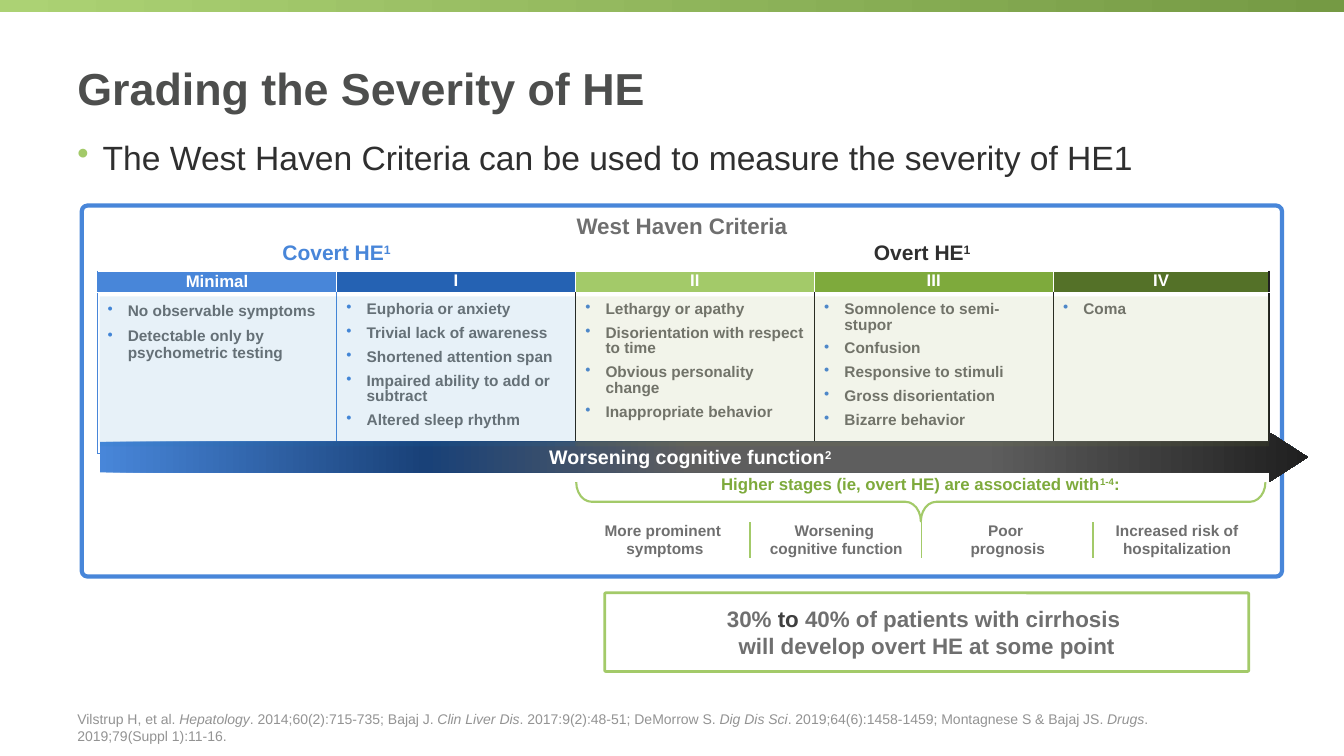
from lxml import etree
from pptx import Presentation
from pptx import util as u
from pptx.dml.color import RGBColor
from pptx.enum import shapes, text
from pptx.oxml import ns

C = {"white": "FFFFFF", "title": "4D4E4D", "dark": "2F2F2F", "grey": "6F6F6F",
     "pale": "939393", "ink": "3F3F3F", "black": "202020", "blue": "4886D9",
     "royal": "2562B3", "navy": "194178", "ash": "5E5E5E", "lime": "A3CA69",
     "green": "7EAA3C", "forest": "547128", "bar_start": "ACD274",
     "bar_end": "759A44", "olive": "88983A", "azure": "167FC0"}

GRADES = [
    ("Minimal", "blue", "blue", "blue",
     ["No observable symptoms", "Detectable only by psychometric testing"]),
    ("I", "royal", "blue", "black",
     ["Euphoria or anxiety", "Trivial lack of awareness", "Shortened attention span",
      "Impaired ability to add or subtract", "Altered sleep rhythm"]),
    ("II", "lime", "black", "black",
     ["Lethargy or apathy", "Disorientation with respect to time",
      "Obvious personality change", "Inappropriate behavior"]),
    ("III", "green", "black", "black",
     ["Somnolence to semi-stupor", "Confusion", "Responsive to stimuli",
      "Gross disorientation", "Bizarre behavior"]),
    ("IV", "forest", "black", "black", ["Coma"]),
]
OUTCOMES = ["More prominent \nsymptoms", "Worsening \ncognitive function",
            "Poor \nprognosis", "Increased risk of \nhospitalization "]
CITATION = [("Vilstrup H, et al. ", ""), ("Hepatology", "i"),
            (". 2014;60(2):715-735; Bajaj J. ", ""), ("Clin Liver Dis", "i"),
            (". 2017:9(2):48-51; DeMorrow S. ", ""), ("Dig Dis Sci", "i"),
            (". 2019;64(6):1458-1459; Montagnese S & Bajaj JS. ", ""), ("Drugs", "i"),
            (". 2019;79(Suppl 1):11-16.", "")]


def rgb(color):
    return RGBColor.from_string(C[color])


def sub(parent, tag, **attrs):
    return etree.SubElement(parent, ns.qn(tag), attrs)


def sub_color(parent, color):
    return sub(parent, "a:srgbClr", val=C[color])


def write(p, runs, size, color, bold=True, align=None):
    """Fill a paragraph; each run is (text, style): "", "sup", "i" or a colour name."""
    p.font.name, p.font.size, p.font.bold = "Arial", u.Pt(size), bold
    p.font.color.rgb = rgb(color)
    if align:
        p.alignment = align
    for words, style in [(runs, "")] if isinstance(runs, str) else runs:
        for i, line in enumerate(words.split("\n")):
            if i:
                p.add_line_break()
            r = p.add_run()
            r.text = line
            if style == "sup":
                r.font._element.set("baseline", "30000")
            elif style == "i":
                r.font.italic = True
            elif style:
                r.font.color.rgb = rgb(style)


def bullet(p, color, indent, before):
    p.space_before = u.Pt(before)
    pPr = p._p.get_or_add_pPr()
    pPr.set("marL", str(u.Cm(indent)))
    pPr.set("indent", str(-u.Cm(indent)))
    marks = [etree.Element(ns.qn("a:buClr")), etree.Element(ns.qn("a:buChar"), char="•")]
    sub_color(marks[0], color)
    at = pPr.index(pPr.find(ns.qn("a:defRPr")))
    pPr[at:at] = marks


def label(s, box, runs, size, color, bold=True, align=None, anchor=None, wrap=True):
    tf = s.shapes.add_textbox(*map(u.Cm, box)).text_frame
    tf.word_wrap = wrap
    if anchor:
        tf.vertical_anchor = anchor
    write(tf.paragraphs[0], runs, size, color, bold, align)
    return tf.paragraphs[0]


def shape(s, kind, box, fill=None, line=None, width=1, adjust=(), alpha=None):
    sp = s.shapes.add_shape(kind, *map(u.Cm, box))
    sp.shadow.inherit = False
    for i, value in enumerate(adjust):
        sp.adjustments[i] = value
    if fill:
        sp.fill.solid()
        sp.fill.fore_color.rgb = rgb(fill)
    else:
        sp.fill.background()
    if alpha:
        sub(sp.element.spPr.find(".//" + ns.qn("a:srgbClr")), "a:alpha", val=str(alpha * 1000))
    if line:
        sp.line.color.rgb = rgb(line)
        sp.line.width = u.Pt(width)
    else:
        sp.line.fill.background()
    return sp


def shade(sp, stops):
    """Left-to-right gradient through (percent, colour) stops."""
    sp.fill.gradient()
    sp.fill.gradient_angle = 0
    gs_list = sp.element.spPr.find(".//" + ns.qn("a:gsLst"))
    gs_list[:] = []
    for percent, color in stops:
        sub_color(sub(gs_list, "a:gs", pos=str(percent * 1000)), color)


def divider(s, x, top, bottom):
    ln = s.shapes.add_connector(shapes.MSO_CONNECTOR.STRAIGHT,
                                u.Cm(x), u.Cm(top), u.Cm(x), u.Cm(bottom))
    ln.line.color.rgb = rgb("lime")
    ln.line.width = u.Pt(1)
    sub(ln.element.spPr, "a:effectLst")


def style_cell(cell, margins, fill=None, **borders):
    """Set margins (left, top, right, bottom), fill and borders (lnL, lnR, lnB)."""
    (cell.margin_left, cell.margin_top,
     cell.margin_right, cell.margin_bottom) = map(u.Cm, margins)
    tcPr = cell._tc.get_or_add_tcPr()
    for side, color in borders.items():
        ln = sub(tcPr, "a:" + side, w=str(u.Pt(1)))
        sub_color(sub(ln, "a:solidFill"), color)
    if fill:
        cell.fill.solid()
        cell.fill.fore_color.rgb = rgb(fill)
    else:
        cell.fill.background()


def criteria_table(s):
    widths, heights = [6.02] * 4 + [5.44], [0.74, 0.53, 4.06]
    tbl = s.shapes.add_table(3, 5, u.Cm(2.46), u.Cm(6.07),
                             u.Cm(sum(widths)), u.Cm(sum(heights))).table
    tbl.first_row = tbl.horz_banding = False
    for col, width in zip(tbl.columns, widths):
        col.width = u.Cm(width)
    for row, height in zip(tbl.rows, heights):
        row.height = u.Cm(height)
    center, middle = text.PP_ALIGN.CENTER, text.MSO_ANCHOR.MIDDLE
    for first, last, name, color in [(0, 1, "Covert HE", "blue"), (2, 4, "Overt HE", "dark")]:
        cell = tbl.cell(0, first)
        cell.merge(tbl.cell(0, last))
        for i in range(first, last + 1):
            style_cell(tbl.cell(0, i), (0, 0, 0, 0.13))
        cell.vertical_anchor = middle
        write(cell.text_frame.paragraphs[0], [(name, ""), ("1", "sup")], 15, color, align=center)
    for i, (grade, fill, left, right, signs) in enumerate(GRADES):
        head, body = tbl.cell(1, i), tbl.cell(2, i)
        edges = {"lnL": "blue" if i == 0 else "white", "lnR": "black" if i == 4 else "white"}
        style_cell(head, (0.25, 0, 0.25, 0), fill, **edges)
        head.vertical_anchor = middle
        p = head.text_frame.paragraphs[0]
        write(p, grade, 12, "white", align=center)
        if i:
            p.line_spacing = 0.9
        style_cell(body, [0.25] * 4, lnL=left, lnR=right, lnB=left)
        tf = body.text_frame
        for j, sign in enumerate(signs):
            p = tf.add_paragraph() if j else tf.paragraphs[0]
            write(p, sign, 11, "grey")
            if i:
                p.line_spacing = 0.9
            bullet(p, "blue", 0.51, 6)


def main():
    prs = Presentation()
    prs.slide_width, prs.slide_height = u.Cm(33.87), u.Cm(19.05)
    s = prs.slides.add_slide(prs.slide_layouts[6])
    kind, anchor, center = shapes.MSO_SHAPE, text.MSO_ANCHOR, text.PP_ALIGN.CENTER

    shade(shape(s, kind.RECTANGLE, (0, 0, 33.87, 0.3)), [(0, "bar_start"), (100, "bar_end")])
    label(s, (1.7, 17.65, 29.85, 1.22), CITATION, 10, "pale", False, anchor=anchor.BOTTOM)
    label(s, (1.7, 0.56, 29.85, 3.3), "Grading the Severity of HE", 32, "title",
          anchor=anchor.MIDDLE)
    p = label(s, (1.7, 3.33, 29.85, 1.75),
              "The West Haven Criteria can be used to measure the severity of HE1",
              24, "dark", False)
    bullet(p, "lime", 0.64, 10)

    shape(s, kind.ROUNDED_RECTANGLE, (2.06, 5.18, 30.25, 9.35), "white", "blue", 3, [0.016])
    criteria_table(s)
    arrow = shape(s, kind.RIGHT_ARROW, (2.51, 10.9, 30.45, 1.24), adjust=[0.617, 0.776])
    shade(arrow, [(0, "blue"), (27, "navy"), (49, "ash"), (73, "ash"), (100, "black")])
    arrow.text_frame.vertical_anchor = anchor.MIDDLE
    write(arrow.text_frame.paragraphs[0],
          [("Worsening cognitive function", ""), ("2 ", "sup")], 14, "white", align=center)
    label(s, (2.06, 5.21, 30.25, 0.94), "West Haven Criteria", 16, "grey", align=center)

    label(s, (14.53, 11.81, 17.45, 0.76),
          [("Higher stages (ie, overt HE) are associated with", ""), ("1-4", "sup"), (": ", "")],
          12, "green", align=center)
    brace = shape(s, kind.RIGHT_BRACE, (22.71, 3.96, 0.99, 17.37), None, "lime", 1.5,
                  [0.393, 0.5])
    brace.rotation = 90
    for i, outcome in enumerate(OUTCOMES):
        x = 14.73 + 4.32 * i
        label(s, (x, 13, 4.06, 1.27), outcome, 11, "grey", align=center, wrap=False)
        if i:
            divider(s, x - 0.15, 13.16, 14.07)

    shape(s, kind.RECTANGLE, (14.5, 7.47, 17.48, 3.78), "olive", alpha=10)
    shape(s, kind.RECTANGLE, (2.51, 7.47, 11.99, 3.78), "azure", alpha=10)
    callout = shape(s, kind.ROUNDED_RECTANGLE, (15.24, 14.94, 16.23, 1.98), "white", "lime", 2,
                    [0.016])
    callout.text_frame.vertical_anchor = anchor.MIDDLE
    write(callout.text_frame.paragraphs[0],
          [("30% ", ""), ("to ", "ink"),
           ("40% of patients with cirrhosis \nwill develop overt HE at some point", "")],
          16, "grey", align=center)
    prs.save("out.pptx")


if __name__ == "__main__":
    main()
